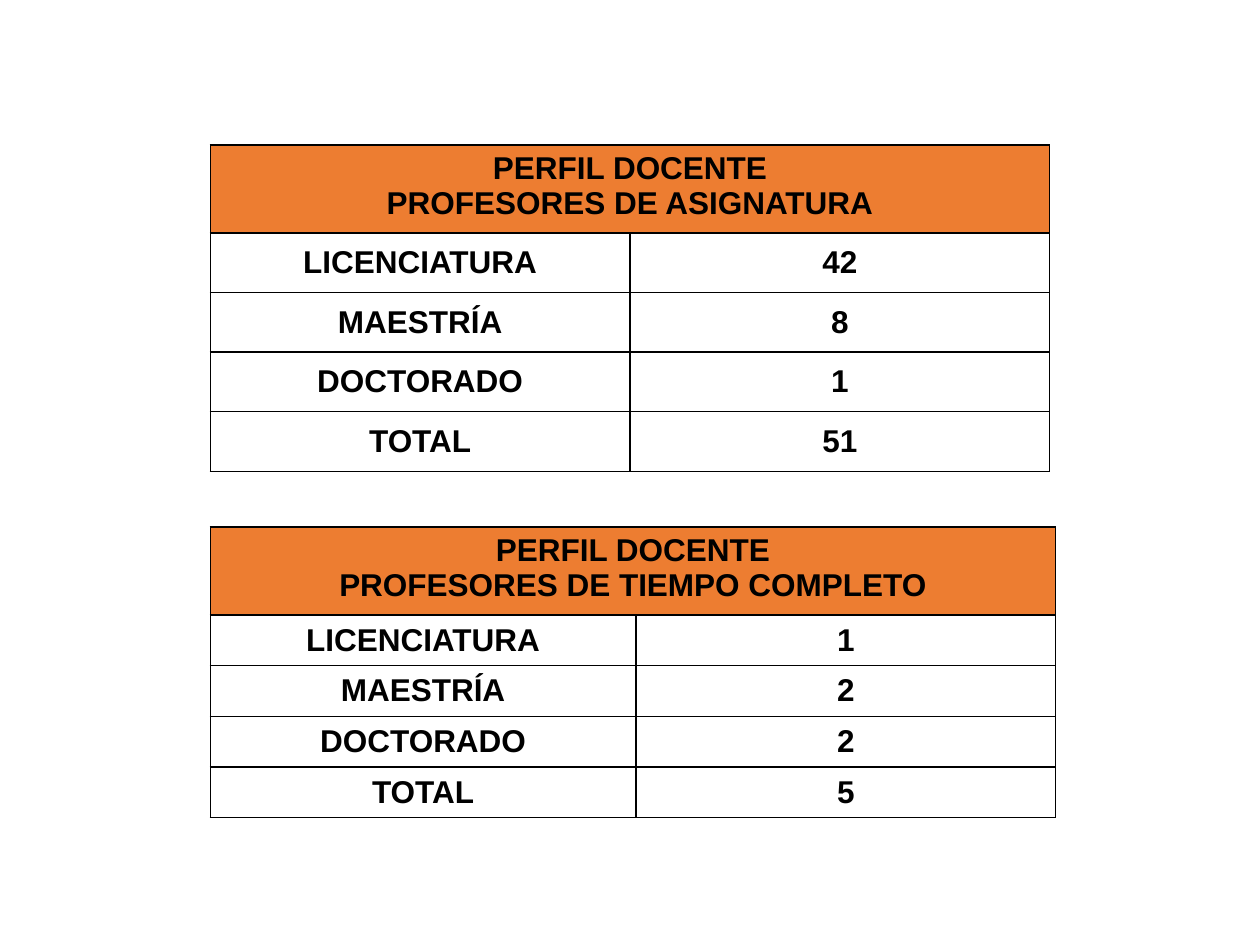
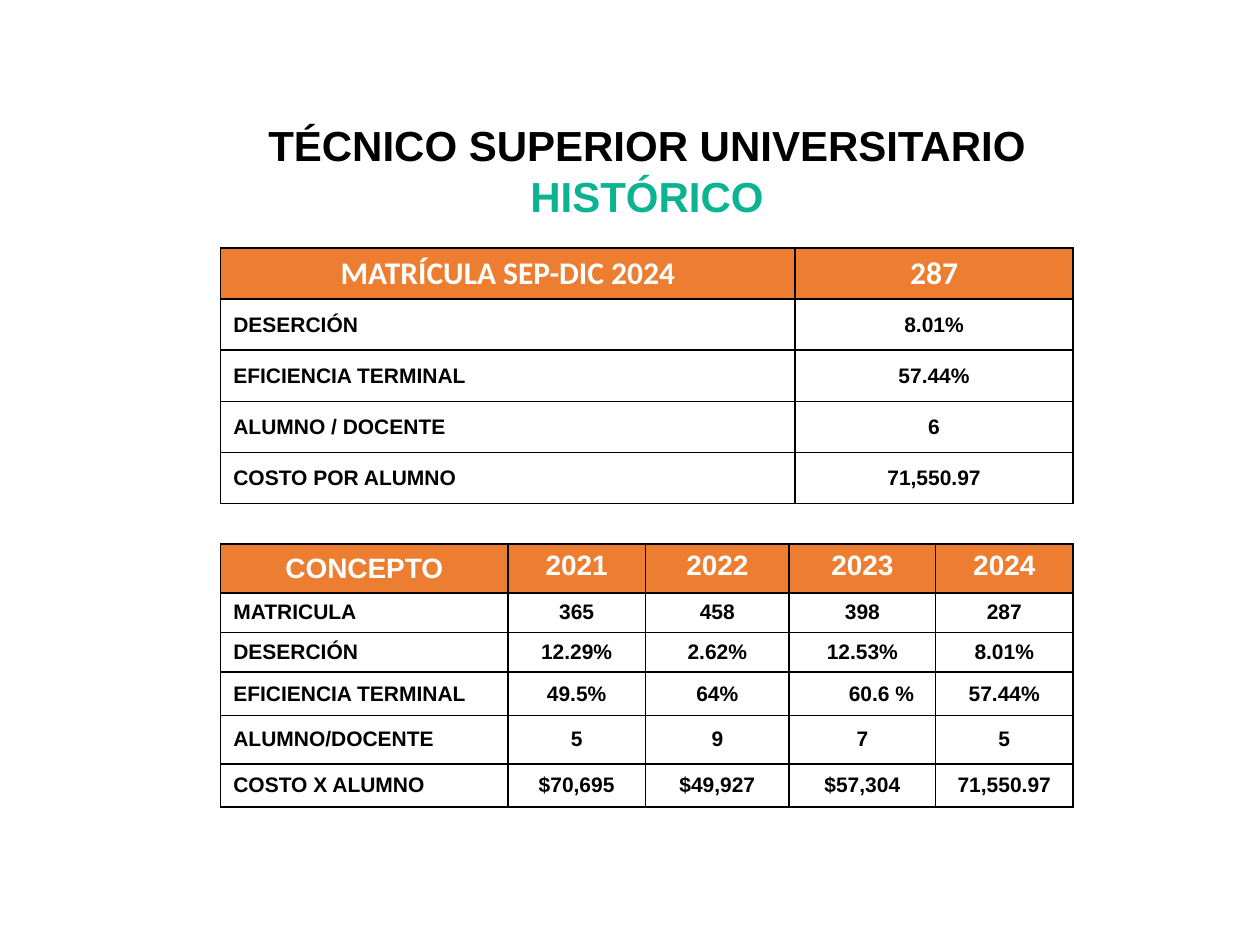
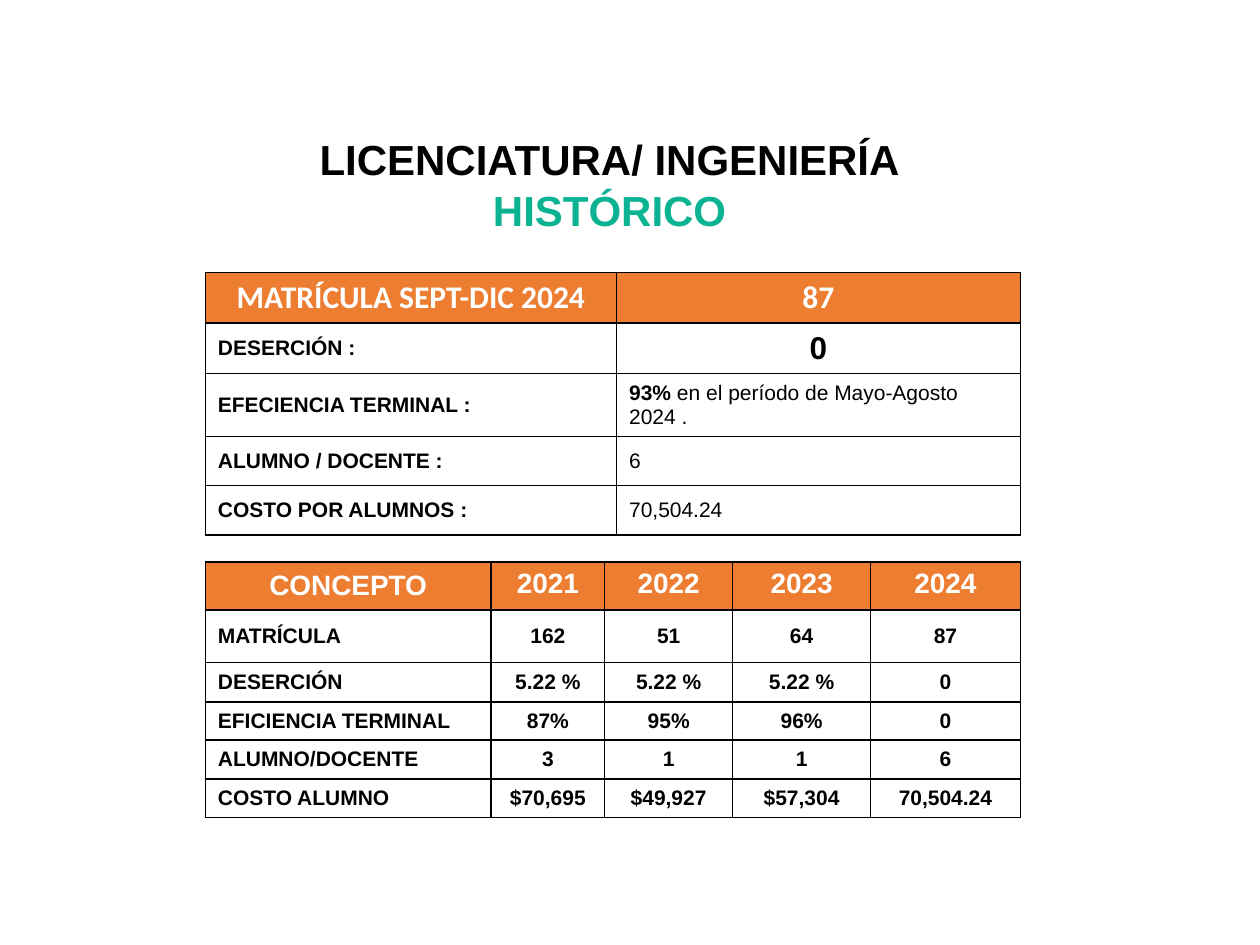
from pptx import Presentation
from pptx.util import Cm, Pt
from pptx.dml.color import RGBColor as RGB
from pptx.enum.text import MSO_ANCHOR as Anchor, PP_ALIGN as Align
from pptx.oxml import parse_xml
from pptx.oxml.ns import nsdecls

# Shared style
HUE = {"ink": "000000", "paper": "FFFFFF", "head": "ED7D31", "accent": "0CB393"}
FONT = "Arial"
EDGES = "LRTB"

# Content: lengths in cm
LEVELS = ["LICENCIATURA", "MAESTRÍA", "DOCTORADO", "TOTAL"]
YEARS = ["CONCEPTO", "2021", "2022", "2023", "2024"]

STAFF = [
    {"at": (4.24, 2.92), "cols": [8.46, 8.46], "rows": [1.78] + [1.2] * 4,
     "head": "PERFIL DOCENTE\nPROFESORES DE ASIGNATURA",
     "counts": ["42", "8", "1", "51"]},
    {"at": (4.24, 10.62), "cols": [8.58, 8.46], "rows": [1.78] + [1.02] * 4,
     "head": "PERFIL DOCENTE\nPROFESORES DE TIEMPO COMPLETO",
     "counts": ["1", "2", "2", "5"]},
]

TECH = {
    "title": "TÉCNICO SUPERIOR UNIVERSITARIO", "box": (5.08, 2.29, 15.93, 2.31),
    "now": {"at": (4.45, 5.0), "cols": [11.58, 5.6], "rows": [1.03] * 5, "data": [
        ["MATRÍCULA SEP-DIC 2024", "287"],
        ["DESERCIÓN", "8.01%"],
        ["EFICIENCIA TERMINAL", "57.44%"],
        ["ALUMNO / DOCENTE", "6"],
        ["COSTO POR ALUMNO", "71,550.97"]]},
    "past": {"at": (4.45, 10.97), "cols": [5.79, 2.77, 2.9, 2.95, 2.77],
             "rows": [0.98, 0.8, 0.8, 0.87, 0.98, 0.87], "data": [
        YEARS,
        ["MATRICULA", "365", "458", "398", "287"],
        ["DESERCIÓN", "12.29%", "2.62%", "12.53%", "8.01%"],
        ["EFICIENCIA TERMINAL", "49.5%", "64%", "60.6 %", "57.44%"],
        ["ALUMNO/DOCENTE", "5", "9", "7", "5"],
        ["COSTO X ALUMNO", "$70,695", "$49,927", "$57,304", "71,550.97"]]},
}

DEGREE = {
    "title": "LICENCIATURA/ INGENIERÍA", "box": (5.94, 2.57, 12.7, 2.31),
    "now": {"at": (4.14, 5.49), "cols": [8.29, 8.14],
            "rows": [1.02, 1.02, 1.27, 0.99, 0.99], "data": [
        ["MATRÍCULA SEPT-DIC 2024", "87"],
        ["DESERCIÓN :", "0"],
        ["EFECIENCIA TERMINAL :", "93%"],
        ["ALUMNO / DOCENTE :", "6"],
        ["COSTO POR ALUMNOS :", "70,504.24"]]},
    "past": {"at": (4.14, 11.33), "cols": [5.76, 2.29, 2.58, 2.78, 3.02],
             "rows": [0.97, 1.06, 0.79, 0.77, 0.78, 0.78], "data": [
        YEARS,
        ["MATRÍCULA", "162", "51", "64", "87"],
        ["DESERCIÓN", "5.22 %", "5.22 %", "5.22 %", "0"],
        ["EFICIENCIA TERMINAL", "87%", "95%", "96%", "0"],
        ["ALUMNO/DOCENTE", "3", "1", "1", "6"],
        ["COSTO ALUMNO", "$70,695", "$49,927", "$57,304", "70,504.24"]]},
}
PERIOD = " en el período de Mayo-Agosto 2024 ."


def style(run, size, hue="ink", bold=True, face=FONT):
    font = run.font
    font.size, font.bold, font.name = Pt(size), bold, face
    font.color.rgb = RGB.from_string(HUE[hue])


def write(frame, text, size, hue="ink", align=Align.CENTER, face=FONT):
    frame.text = text
    for para in frame.paragraphs:
        para.alignment = align
        for run in para.runs:
            style(run, size, hue, face=face)


def paint(cell, hue):
    """Draw the cell borders, then fill it."""
    props = cell._tc.get_or_add_tcPr()
    for edge in EDGES:
        props.append(parse_xml(
            f'<a:ln{edge} {nsdecls("a")} w="12700"><a:solidFill>'
            f'<a:srgbClr val="{HUE["ink"]}"/></a:solidFill></a:ln{edge}>'))
    cell.fill.solid()
    cell.fill.fore_color.rgb = RGB.from_string(HUE[hue])


def add_grid(slide, at, cols, rows, data, size, head, label):
    """head is (size, hue, face); label aligns the first column."""
    lengths = [Cm(v) for v in (*at, sum(cols), sum(rows))]
    grid = slide.shapes.add_table(len(rows), len(cols), *lengths).table
    grid.first_row = grid.horz_banding = False
    for col, width in zip(grid.columns, cols):
        col.width = Cm(width)
    for row, height in zip(grid.rows, rows):
        row.height = Cm(height)
    for r, line in enumerate(data):
        for c, text in enumerate(line):
            cell = grid.cell(r, c)
            cell.vertical_anchor = Anchor.MIDDLE
            paint(cell, "paper" if r else "head")
            if r:
                side = Align.CENTER if c else label
                write(cell.text_frame, text, size, align=side)
            elif text:
                pts, hue, face = head
                write(cell.text_frame, text, pts, hue, face=face)
    return grid


def add_staff(slide, part):
    data = [[part["head"], ""], *zip(LEVELS, part["counts"])]
    grid = add_grid(slide, part["at"], part["cols"], part["rows"], data,
                    18, (18, "ink", FONT), Align.CENTER)
    grid.cell(0, 0).merge(grid.cell(0, 1))
    grid.cell(0, 0).vertical_anchor = Anchor.TOP


def add_history(slide, part):
    """Title, current figures and yearly figures."""
    past = add_grid(slide, **part["past"], size=12,
                    head=(16, "paper", FONT), label=Align.LEFT)
    for c in range(1, len(YEARS)):
        past.cell(0, c).vertical_anchor = Anchor.TOP
    frame = slide.shapes.add_textbox(*[Cm(v) for v in part["box"]]).text_frame
    frame.word_wrap = False
    write(frame, part["title"] + "\nHISTÓRICO", 24)
    style(frame.paragraphs[1].runs[0], 24, "accent")
    now = add_grid(slide, **part["now"], size=12,
                   head=(18, "paper", "Calibri"), label=Align.LEFT)
    return now, past


def main():
    deck = Presentation()
    deck.slide_width, deck.slide_height = Cm(25.4), Cm(19.05)
    staff, tech, degree = [deck.slides.add_slide(deck.slide_layouts[6])
                           for _ in range(3)]

    # Teaching staff
    for part in STAFF:
        add_staff(staff, part)

    # Technical programme, with one indented figure
    _, past = add_history(tech, TECH)
    cell = past.cell(3, 3)
    cell.margin_left = Cm(1.2)
    cell.margin_right = 0
    cell.text_frame.paragraphs[0].alignment = Align.LEFT

    # Degree programme, with plain left-aligned figures
    now, _ = add_history(degree, DEGREE)
    style(now.cell(1, 1).text_frame.paragraphs[0].runs[0], 18)
    for r in (2, 3, 4):
        para = now.cell(r, 1).text_frame.paragraphs[0]
        para.alignment = Align.LEFT
        if r == 2:
            para.add_run().text = PERIOD
        style(para.runs[-1], 12, bold=False)

    deck.save("out.pptx")


if __name__ == "__main__":
    main()
